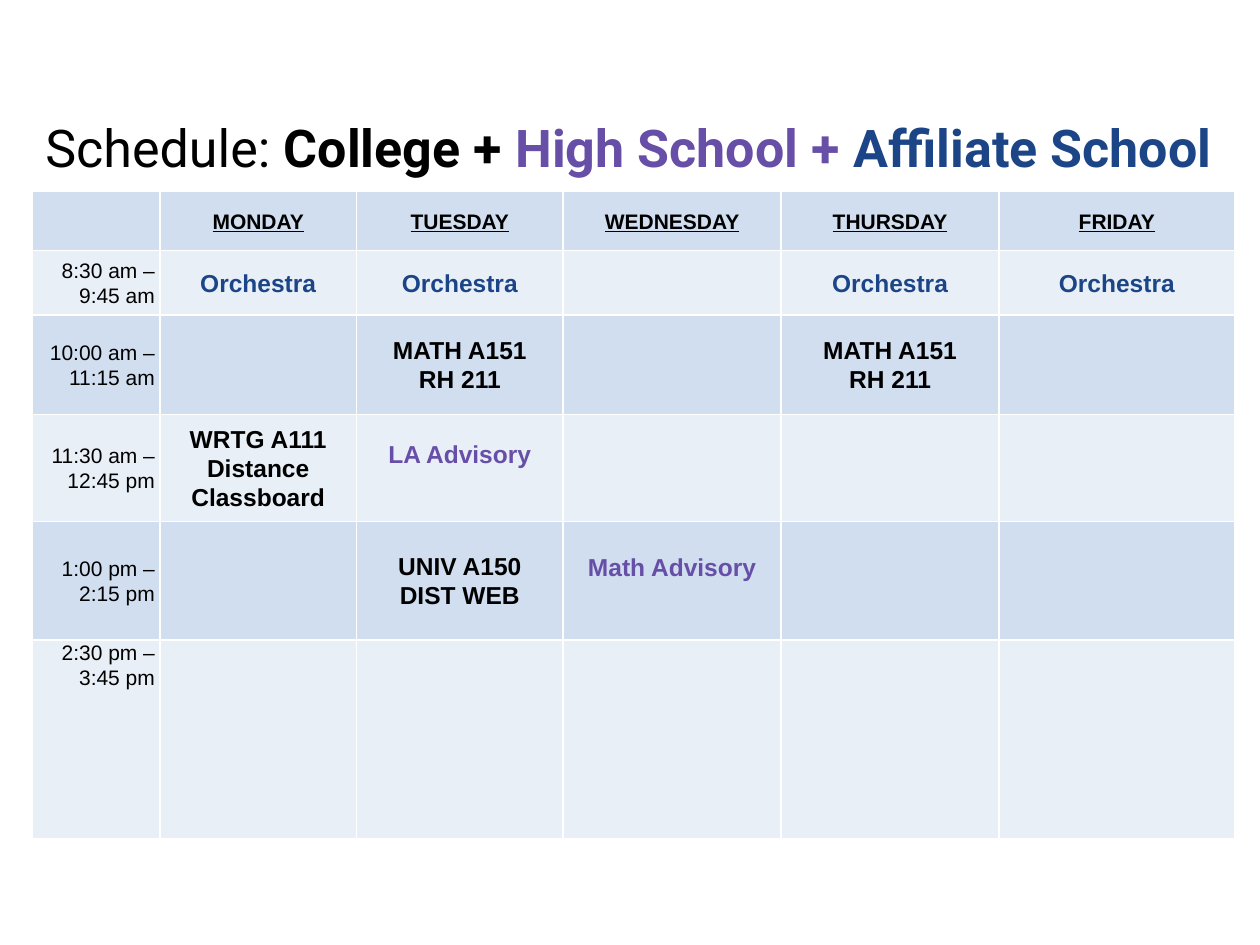
from lxml.etree import SubElement
from pptx import Presentation
from pptx.dml.color import RGBColor
from pptx.enum.text import MSO_ANCHOR, PP_ALIGN
from pptx.oxml.ns import qn
from pptx.util import Inches, Pt

BLACK = RGBColor(0x00, 0x00, 0x00)
PURPLE = RGBColor(0x67, 0x4E, 0xA7)
NAVY = RGBColor(0x1C, 0x45, 0x87)
DARK_BAND = RGBColor(0xD0, 0xDE, 0xEF)
LIGHT_BAND = RGBColor(0xE9, 0xEF, 0xF7)

# Schedule content
DAYS = ["MONDAY", "TUESDAY", "WEDNESDAY", "THURSDAY", "FRIDAY"]
TIMES = ["8:30 am – 9:45 am", "10:00 am – 11:15 am", "11:30 am – 12:45 pm",
         "1:00 pm – 2:15 pm", "2:30 pm – 3:45 pm"]
ORCHESTRA = (["Orchestra"], NAVY)
MATH = (["MATH A151", "RH 211"], BLACK)
CLASSES = {  # (time slot, day), both counted from 1
    (1, 1): ORCHESTRA, (1, 2): ORCHESTRA, (1, 4): ORCHESTRA, (1, 5): ORCHESTRA,
    (2, 2): MATH, (2, 4): MATH,
    (3, 1): (["WRTG A111", "Distance Classboard"], BLACK),
    (3, 2): (["LA Advisory"], PURPLE),
    (4, 2): (["UNIV A150", "DIST WEB"], BLACK),
    (4, 3): (["Math Advisory"], PURPLE),
}
COLUMN_WIDTHS = [1.01, 1.56, 1.64, 1.73, 1.73, 1.87]
ROW_HEIGHTS = [0.47, 0.51, 0.79, 0.85, 0.94, 1.58]
ADVISORY_LIFT = 0.22  # raises advisory entries above the cell middle


def add_run(paragraph, text, font="Arial", size=14, color=BLACK, bold=False,
            underline=False):
    run = paragraph.add_run()
    run.text = text
    run.font.name = font
    run.font.size = Pt(size)
    run.font.color.rgb = color
    run.font.bold = bold
    run.font.underline = underline


class ScheduleSlide:
    """Holds the table style and the current slide."""

    line_spacing = 1.07
    side_margin = 0.04

    def __init__(self, presentation):
        self.slide = presentation.slides.add_slide(presentation.slide_layouts[5])

    def title(self, parts, left, top, width, height):
        title = self.slide.shapes.title
        title.left, title.top = Inches(left), Inches(top)
        title.width, title.height = Inches(width), Inches(height)
        title.text_frame.vertical_anchor = MSO_ANCHOR.MIDDLE
        heading = title.text_frame.paragraphs[0]
        heading.alignment = PP_ALIGN.LEFT
        heading.line_spacing = 0.9
        for text, color, bold in parts:
            add_run(heading, text, font="Roboto", size=29.7, color=color, bold=bold)

    def table(self, left, top):
        schedule = self.slide.shapes.add_table(
            len(ROW_HEIGHTS), len(COLUMN_WIDTHS), Inches(left), Inches(top),
            Inches(sum(COLUMN_WIDTHS)), Inches(sum(ROW_HEIGHTS))).table
        schedule.first_row = schedule.horz_banding = False
        for column, width in zip(schedule.columns, COLUMN_WIDTHS):
            column.width = Inches(width)
        for index, (row, height) in enumerate(zip(schedule.rows, ROW_HEIGHTS)):
            row.height = Inches(height)
            for cell in row.cells:
                self.borders(cell)
                cell.fill.solid()
                cell.fill.fore_color.rgb = LIGHT_BAND if index % 2 else DARK_BAND
        return schedule

    def borders(self, cell):
        properties = cell._tc.get_or_add_tcPr()
        for side in ("a:lnL", "a:lnR", "a:lnT", "a:lnB"):
            line = SubElement(properties, qn(side), w=str(Pt(1)))
            fill = SubElement(line, qn("a:solidFill"))
            SubElement(fill, qn("a:srgbClr"), val="FFFFFF")

    def entry(self, cell, lines, align=PP_ALIGN.CENTER, anchor=MSO_ANCHOR.MIDDLE,
              lift=0, **style):
        cell.margin_left = cell.margin_right = Inches(self.side_margin)
        cell.margin_top, cell.margin_bottom = 0, Inches(lift)
        cell.vertical_anchor = anchor
        frame = cell.text_frame
        for index, line in enumerate(lines):
            paragraph = frame.add_paragraph() if index else frame.paragraphs[0]
            paragraph.alignment = align
            paragraph.line_spacing = self.line_spacing
            add_run(paragraph, line, **style)


def main():
    presentation = Presentation()
    presentation.slide_width, presentation.slide_height = Inches(10), Inches(7.5)
    page = ScheduleSlide(presentation)

    # Title, which doubles as the colour key
    page.title([("Schedule: ", BLACK, False), ("College + ", BLACK, True),
                ("High School + ", PURPLE, True), ("Affiliate School", NAVY, True)],
               0.26, 1, 9.74, 0.39)

    # Weekly schedule: day headings, time slots, classes
    schedule = page.table(0.26, 1.52)
    for column, day in enumerate(DAYS, 1):
        page.entry(schedule.cell(0, column), [day], size=12, bold=True, underline=True)
    for row, time in enumerate(TIMES, 1):
        anchor = MSO_ANCHOR.TOP if row == len(TIMES) else MSO_ANCHOR.MIDDLE
        page.entry(schedule.cell(row, 0), [time], align=PP_ALIGN.RIGHT,
                   anchor=anchor, size=12)
    for (row, column), (lines, color) in CLASSES.items():
        page.entry(schedule.cell(row, column), lines, color=color, bold=True,
                   lift=ADVISORY_LIFT if color == PURPLE else 0)

    presentation.save("out.pptx")


if __name__ == "__main__":
    main()
